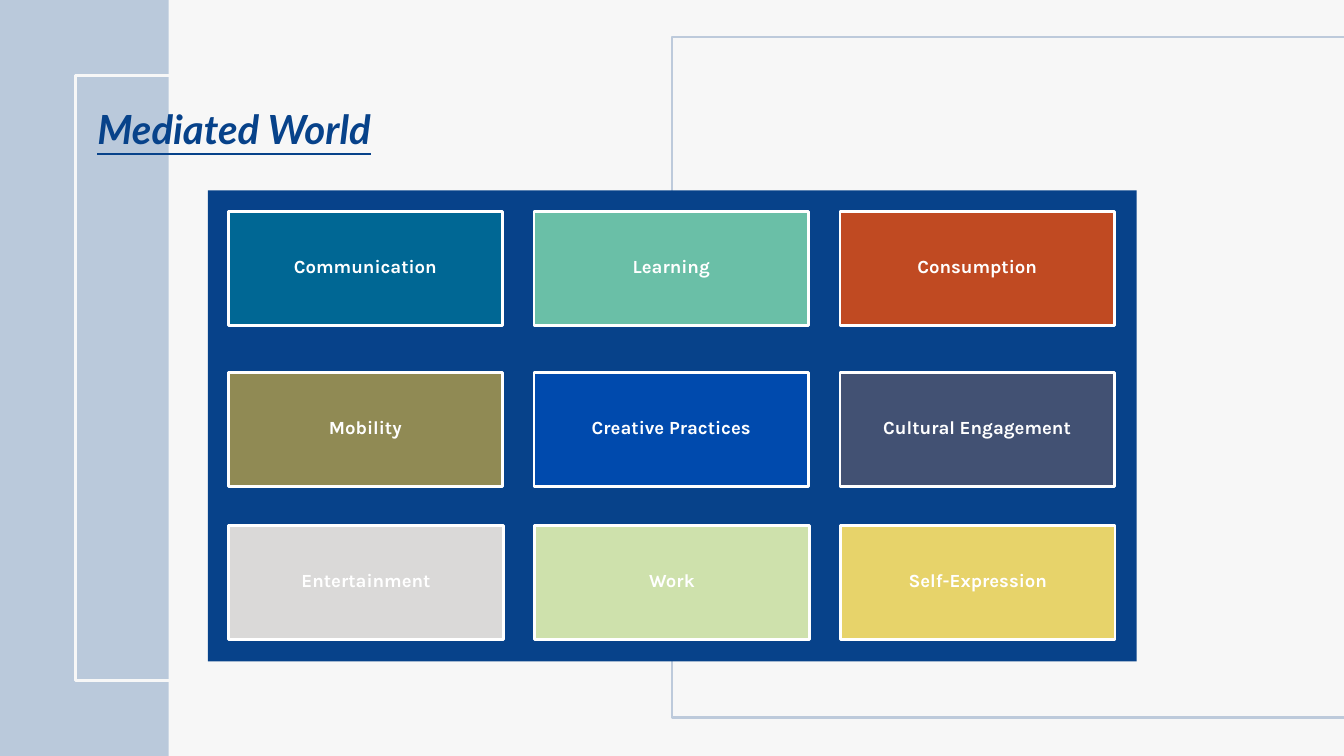
import pptx
import pptx.util
import pptx.dml.color
import pptx.enum.shapes
import pptx.enum.text
import pptx.oxml.ns
import lxml.etree

PX = 9525  # EMU per px on a 1920 x 1080 canvas

THEME = {
    "paper": "F7F7F7", "navy": "07428A", "mist": "BDCADB", "white": "FFFFFF",
    "line": 3,
    "title": {"name": "Lato", "size": 43, "color": "07428A",
              "bold": True, "italic": True, "underline": True},
    "label": {"name": "Karla", "size": 19.9, "color": "FFFFFF", "bold": True},
}

# Grid of activities: (row top, row left, [(label, fill), ...])
CELL_W, CELL_H, COLUMN_STEP = 392, 163, 437
ROWS = [
    (302, 326, [("Communication", "006794"), ("Learning", "6ABFA7"),
                ("Consumption", "C04A22")]),
    (532, 326, [("Mobility", "908A54"), ("Creative Practices", "004AAD"),
                ("Cultural Engagement", "425173")]),
    (751, 327, [("Entertainment", "DAD9D8"), ("Work", "CEE1AC"),
                ("Self-Expression", "E7D36A")]),
]


def px(n):
    return pptx.util.Emu(n * PX)


def rgb(code):
    return pptx.dml.color.RGBColor.from_string(code)


def add_box(slide, x, y, w, h, fill=None, line=None, alpha=None):
    """Rectangle with an optional fill, opacity in percent and outline."""
    sp = slide.shapes.add_shape(pptx.enum.shapes.MSO_SHAPE.RECTANGLE,
                                px(x), px(y), px(w), px(h))
    sp.shadow.inherit = False
    if fill:
        sp.fill.solid()
        sp.fill.fore_color.rgb = rgb(fill)
    else:
        sp.fill.background()
    if alpha is not None:
        color = sp.fill._xPr.find(".//" + pptx.oxml.ns.qn("a:srgbClr"))
        lxml.etree.SubElement(color, pptx.oxml.ns.qn("a:alpha"),
                              val=str(alpha * 1000))
    if line:
        sp.line.color.rgb = rgb(line)
        sp.line.width = pptx.util.Pt(THEME["line"])
    else:
        sp.line.fill.background()
    return sp


def set_text(sp, text, style, align, spacing, frame):
    """Write one paragraph; frame holds the text frame's format values."""
    tf = sp.text_frame
    for name, value in frame.items():
        setattr(tf, name, value)
    p = tf.paragraphs[0]
    p.alignment = align
    p.line_spacing = pptx.util.Pt(spacing)
    r = p.add_run()
    r.text = text
    for name, value in style.items():
        if name == "color":
            r.font.color.rgb = rgb(value)
        else:
            setattr(r.font, name,
                    pptx.util.Pt(value) if name == "size" else value)


def add_cell(slide, x, y, label, fill):
    sp = add_box(slide, x, y, CELL_W, CELL_H, fill, THEME["white"])
    # The larger bottom inset lifts the label slightly above the middle
    set_text(sp, label, THEME["label"], pptx.enum.text.PP_ALIGN.CENTER, 27.9, {
        "word_wrap": True,
        "vertical_anchor": pptx.enum.text.MSO_ANCHOR.MIDDLE,
        "margin_left": px(5), "margin_right": px(5),
        "margin_top": px(5), "margin_bottom": px(17),
    })


def add_title(slide, text):
    sp = slide.shapes.add_textbox(px(139), px(137), px(737), px(78))
    set_text(sp, text, THEME["title"], pptx.enum.text.PP_ALIGN.LEFT, 60.2, {
        "word_wrap": True,
        "auto_size": pptx.enum.text.MSO_AUTO_SIZE.SHAPE_TO_FIT_TEXT,
        "margin_left": 0, "margin_right": 0,
        "margin_top": 0, "margin_bottom": 0,
    })


def main():
    prs = pptx.Presentation()
    prs.slide_width, prs.slide_height = px(1920), px(1080)
    slide = prs.slides.add_slide(prs.slide_layouts[6])
    slide.background.fill.solid()
    slide.background.fill.fore_color.rgb = rgb(THEME["paper"])

    # Side band and outline frames
    add_box(slide, 0, 0, 241, 1080, fill=THEME["navy"], alpha=25)
    add_box(slide, 108, 108, 1704, 864, line=THEME["paper"])
    add_box(slide, 960, 53, 1028, 972, line=THEME["mist"])

    # Panel with the grid of activities
    add_box(slide, 297, 272, 1327, 673, fill=THEME["navy"])
    for top, left, cells in ROWS:
        for column, (label, fill) in enumerate(cells):
            add_cell(slide, left + column * COLUMN_STEP, top, label, fill)

    add_title(slide, "Mediated World")
    prs.save("out.pptx")


if __name__ == "__main__":
    main()
